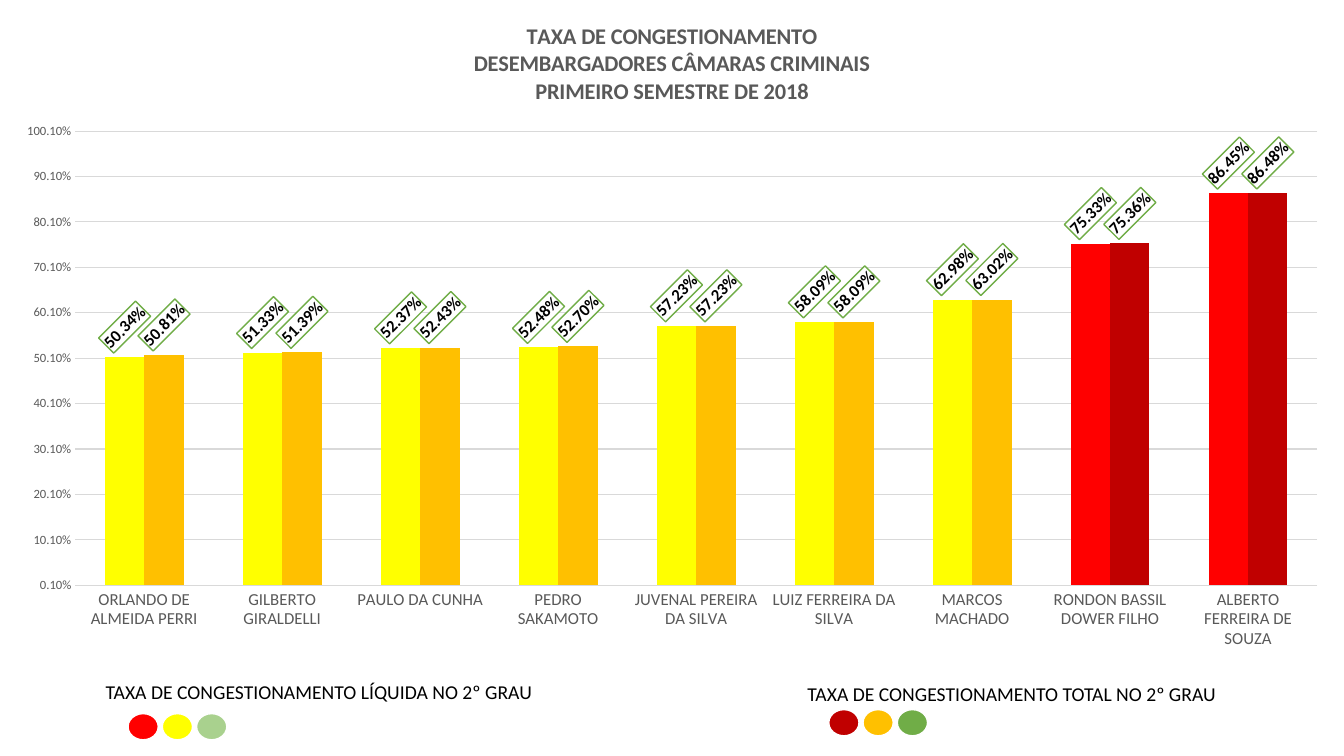
from pptx import Presentation
from pptx.chart.data import CategoryChartData as Data
from pptx.dml.color import RGBColor
from pptx.enum.chart import XL_CHART_TYPE as Kind, XL_LABEL_POSITION as Spot, XL_TICK_MARK as Tick
from pptx.enum.shapes import MSO_SHAPE as Form
from pptx.oxml import parse_xml
from pptx.oxml.ns import nsdecls
from pptx.util import Inches, Pt


def rgb(code):
    return RGBColor.from_string(code)


def style(font, size, color, bold=False):
    font.name = "Calibri"
    font.size = Pt(size)
    font.bold = bold
    font.color.rgb = rgb(color)


deck = Presentation()
deck.slide_width = Inches(13.33)
deck.slide_height = Inches(7.5)
slide = deck.slides.add_slide(deck.slide_layouts[6])

keys = [
    ("TAXA DE CONGESTIONAMENTO TOTAL NO 2º GRAU", 7.91, 6.72, 4.29,
     8.22, 7.04, ["C00000", "FFC000", "70AD47"]),
    ("TAXA DE CONGESTIONAMENTO LÍQUIDA NO 2º GRAU", 0.95, 6.7, 4.46,
     1.27, 7.08, ["FF0000", "FFFF00", "A9D18E"]),
]
for text, left, top, width, start, level, colors in keys:
    box = slide.shapes.add_textbox(Inches(left), Inches(top), Inches(width), Inches(0.34))
    box.text_frame.text = text
    box.text_frame.word_wrap = False
    style(box.text_frame.paragraphs[0].runs[0].font, 14, "000000")
    for i, color in enumerate(colors):
        dot = slide.shapes.add_shape(
            Form.OVAL, Inches(start + 0.34 * i), Inches(level), Inches(0.3), Inches(0.26))
        dot.shadow.inherit = False
        dot.fill.solid()
        dot.fill.fore_color.rgb = rgb(color)
        dot.line.color.rgb = rgb("FFFFFF")
        dot.line.width = Pt(1)

rates = [
    ("ORLANDO DE ALMEIDA PERRI", 0.5034, 0.5081),
    ("GILBERTO GIRALDELLI", 0.5133, 0.5139),
    ("PAULO DA CUNHA", 0.5237, 0.5243),
    ("PEDRO SAKAMOTO", 0.5248, 0.5270),
    ("JUVENAL PEREIRA DA SILVA", 0.5723, 0.5723),
    ("LUIZ FERREIRA DA SILVA", 0.5809, 0.5809),
    ("MARCOS MACHADO", 0.6298, 0.6302),
    ("RONDON BASSIL DOWER FILHO", 0.7533, 0.7536),
    ("ALBERTO FERREIRA DE SOUZA", 0.8645, 0.8648),
]
names, net, total = zip(*rates)
data = Data(number_format="0.00%")
data.categories = names
data.add_series("Series 1", net)
data.add_series("Series 2", total)
chart = slide.shapes.add_chart(
    Kind.COLUMN_CLUSTERED, 0, 0, Inches(13.33), Inches(6.57), data).chart
style(chart.font, 10, "000000")
chart.has_legend = False
chart.has_title = True
title = chart.chart_title
title.include_in_layout = False
title.text_frame.text = (
    "TAXA DE CONGESTIONAMENTO\nDESEMBARGADORES CÂMARAS CRIMINAIS\nPRIMEIRO SEMESTRE DE 2018")
for line in title.text_frame.paragraphs:
    style(line.runs[0].font, 16, "595959", True)

base = chart.category_axis
base.major_tick_mark = Tick.NONE
base.format.line.color.rgb = rgb("D9D9D9")
base.format.line.width = Pt(1)
style(base.tick_labels.font, 12, "595959")

scale = chart.value_axis
scale.minimum_scale = 0.001
scale.maximum_scale = 1.001
scale.major_unit = 0.1
scale.major_tick_mark = Tick.NONE
scale.format.line.fill.background()
scale.major_gridlines.format.line.color.rgb = rgb("D9D9D9")
scale.major_gridlines.format.line.width = Pt(0.75)
scale.tick_labels.number_format = "#,##0.00%"
scale.tick_labels.number_format_is_linked = False
style(scale.tick_labels.font, 9, "595959")

plot = chart.plots[0]
plot.gap_width = 150
plot.overlap = 0
plot.vary_by_categories = False
for bars, color, high in zip(plot.series, ["FFFF00", "FFC000"], ["FF0000", "C00000"]):
    bars.invert_if_negative = False
    bars.format.fill.solid()
    bars.format.fill.fore_color.rgb = rgb(color)
    for i, rate in enumerate(bars.values):
        if rate > 0.7:
            fill = bars.points[i].format.fill
            fill.solid()
            fill.fore_color.rgb = rgb(high)
    labels = bars.data_labels
    labels.show_value = True
    labels.number_format = "0.00%"
    labels.number_format_is_linked = False
    labels.position = Spot.OUTSIDE_END
    style(labels.font, 12, "000000", True)
    prose = labels._element.find("{*}txPr")
    prose.find("{*}bodyPr").set("rot", "-2700000")
    prose.addprevious(parse_xml(
        f'<c:spPr {nsdecls("c", "a")}>'
        '<a:solidFill><a:srgbClr val="FFFFFF"/></a:solidFill>'
        '<a:ln w="12700"><a:solidFill><a:srgbClr val="70AD47"/></a:solidFill></a:ln>'
        '</c:spPr>'))

area = chart._chartSpace.find(".//{*}plotArea")
for old in area.findall("{*}layout"):
    area.remove(old)
area.insert(0, parse_xml(
    f'<c:layout {nsdecls("c")}><c:manualLayout><c:layoutTarget val="inner"/>'
    '<c:xMode val="edge"/><c:yMode val="edge"/><c:x val="0.056"/><c:y val="0.198"/>'
    '<c:w val="0.924"/><c:h val="0.686"/></c:manualLayout></c:layout>'))

deck.save("out.pptx")
